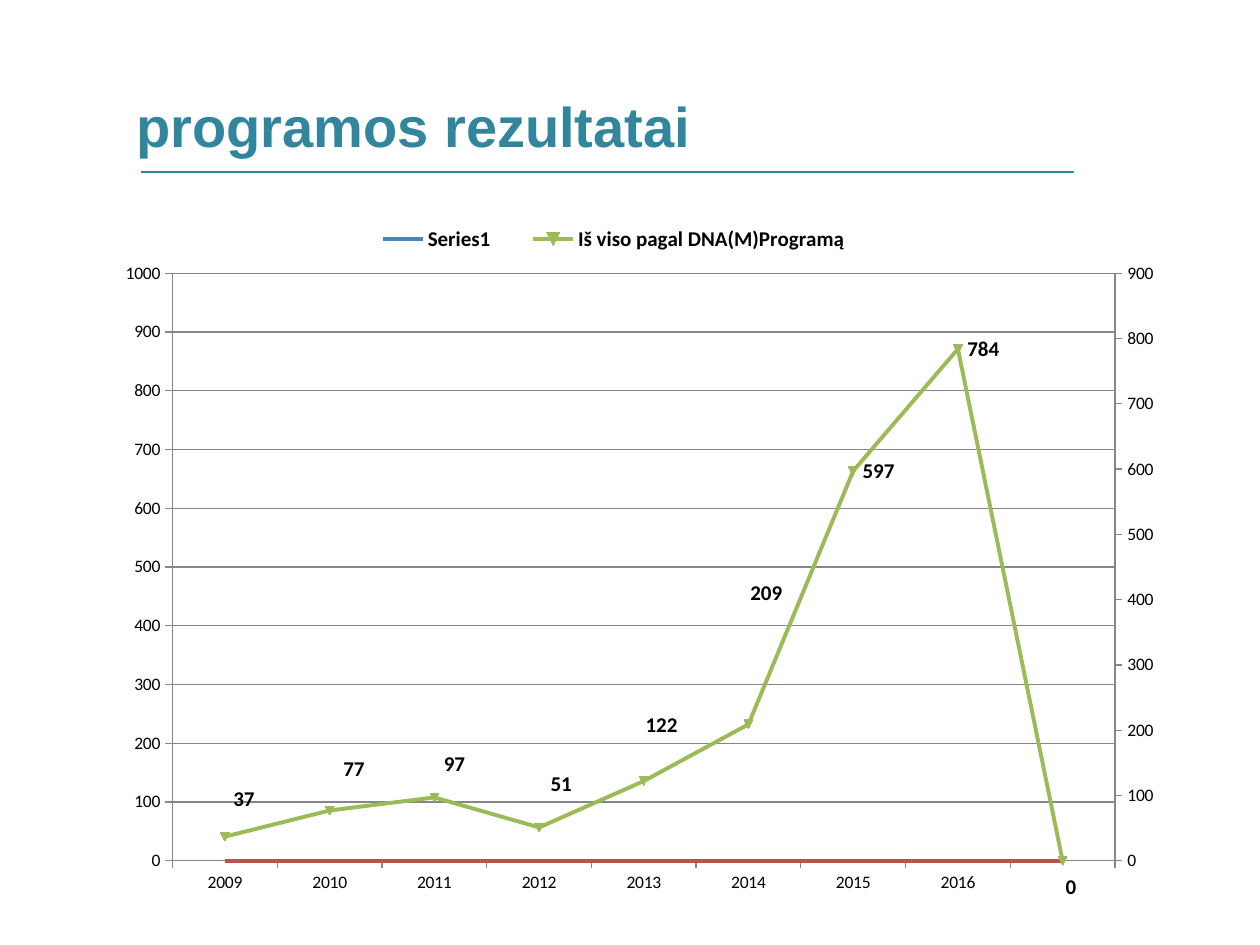
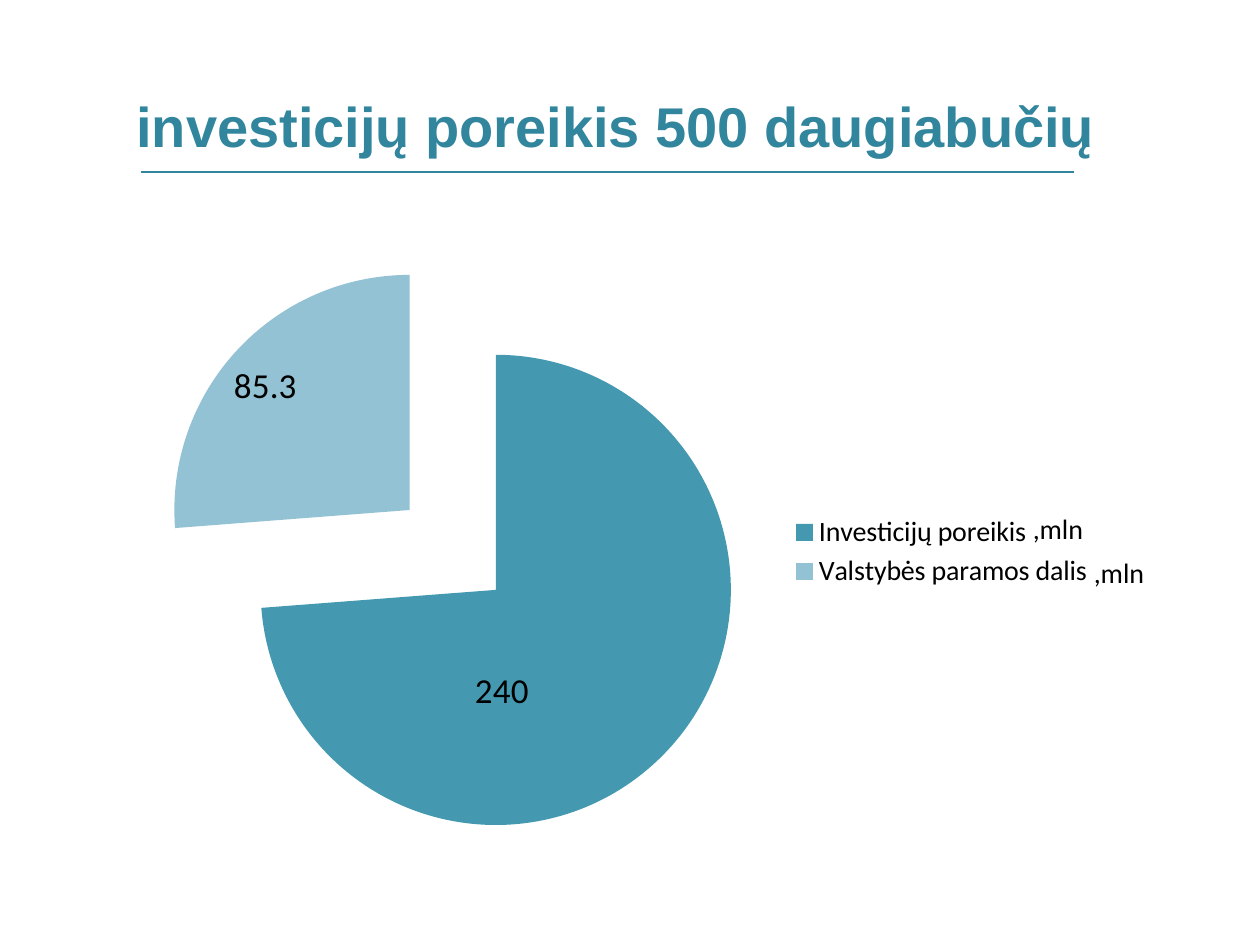
from copy import deepcopy

from lxml import etree
from pptx import Presentation
from pptx.chart.data import CategoryChartData
from pptx.dml.color import RGBColor
from pptx.enum.chart import (XL_CHART_TYPE, XL_LABEL_POSITION, XL_LEGEND_POSITION,
                             XL_MARKER_STYLE, XL_TICK_MARK)
from pptx.enum.shapes import MSO_CONNECTOR
from pptx.enum.text import MSO_AUTO_SIZE
from pptx.oxml.ns import qn
from pptx.util import Cm, Pt

LINE_STACKED, PIE = XL_CHART_TYPE.LINE_STACKED, XL_CHART_TYPE.PIE
LABEL_RIGHT, LABEL_CENTER = XL_LABEL_POSITION.RIGHT, XL_LABEL_POSITION.CENTER
LEGEND_TOP, LEGEND_RIGHT = XL_LEGEND_POSITION.TOP, XL_LEGEND_POSITION.RIGHT
AUTO_MARKER, NO_MARKER = XL_MARKER_STYLE.AUTOMATIC, XL_MARKER_STYLE.NONE
TICK_OUT = XL_TICK_MARK.OUTSIDE
STRAIGHT = MSO_CONNECTOR.STRAIGHT
GROW = MSO_AUTO_SIZE.SHAPE_TO_FIT_TEXT

color = RGBColor.from_string
TEAL, BLACK, GRID = "31859C", "000000", "868686"
BLUE, RED, GREEN = "4F81BD", "C0504D", "9BBB59"
NEED_COLOR, SUPPORT_COLOR = "4499B1", "92C2D4"


def add_text(slide, text, left, top, width, height, font, size, hex_color, bold=False):
    box = slide.shapes.add_textbox(Cm(left), Cm(top), Cm(width), Cm(height))
    box.text_frame.word_wrap = False
    box.text_frame.auto_size = GROW
    paragraph = box.text_frame.paragraphs[0]
    paragraph.text = text
    paragraph.font.name = font
    paragraph.font.size = Pt(size)
    paragraph.font.bold = bold
    paragraph.font.color.rgb = color(hex_color)


def set_layout(parent, **settings):
    """Place a chart part; numbers are percent of the chart's size."""
    for old in parent.xpath("c:layout"):
        parent.remove(old)
    layout = etree.SubElement(parent, qn("c:layout"))
    manual = etree.SubElement(layout, qn("c:manualLayout"))
    for tag, value in settings.items():
        text = value if isinstance(value, str) else f"{value / 100:.4f}"
        etree.SubElement(manual, qn(f"c:{tag}")).set("val", text)
    parent.insert(len(parent.xpath("c:idx | c:legendPos | c:legendEntry")), layout)


presentation = Presentation()
presentation.slide_width, presentation.slide_height = Cm(25.4), Cm(19.05)

# Title and rule on both slides
slides = []
for title, width in (("programos rezultatai", 15.39),
                     ("investicijų poreikis 500 daugiabučių", 20.4)):
    slide = presentation.slides.add_slide(presentation.slide_layouts[6])
    add_text(slide, title, 2.5, 1.73, width, 1.62, "Arial", 32, TEAL, True)
    rule = slide.shapes.add_connector(STRAIGHT, Cm(2.85), Cm(3.47), Cm(21.65), Cm(3.47))
    rule.line.color.rgb = color(TEAL)
    rule.line.width = Pt(0.75)
    etree.SubElement(rule.element.spPr, qn("a:effectLst"))
    slides.append(slide)
results_slide, investment_slide = slides

# Chart data
results_data = CategoryChartData()
results_data.categories = [str(year) for year in range(2009, 2017)] + [""]
results_data.add_series("", [None] * 9)
results_data.add_series("Series 2", [0] + [None] * 8)
results_data.add_series("Iš viso pagal DNA(M)Programą",
                        [37, 77, 97, 51, 122, 209, 597, 784, None])
investment_data = CategoryChartData()
investment_data.categories = ["Investicijų poreikis", "Valstybės paramos dalis"]
investment_data.add_series("Series 1", [240, 85.3])

# Both charts with their legends
charts = []
for slide, kind, data, place, legend_side, legend_size, legend_bold in (
    (results_slide, LINE_STACKED, results_data, (2.12, 4.12, 21.59, 14.17),
     LEGEND_TOP, 12, True),
    (investment_slide, PIE, investment_data, (2.85, 4.32, 19.46, 13.59),
     LEGEND_RIGHT, 16, False),
):
    chart = slide.shapes.add_chart(kind, *map(Cm, place), data).chart
    chart.has_title = False
    chart.font.name = "Calibri"
    chart.font.size = Pt(10)
    chart.font.color.rgb = color(BLACK)
    chart.has_legend = True
    chart.legend.position = legend_side
    chart.legend.include_in_layout = False
    chart.legend.font.size = Pt(legend_size)
    chart.legend.font.bold = legend_bold
    chart.plots[0].vary_by_categories = kind == PIE
    charts.append(chart)
results_chart, investment_chart = charts

# Results: lines and axes
for series, hex_color in zip(results_chart.plots[0].series, (BLUE, RED, GREEN)):
    series.smooth = False
    series.format.line.color.rgb = color(hex_color)
    series.format.line.width = Pt(2.25)
    series.marker.style = AUTO_MARKER if hex_color == GREEN else NO_MARKER
total = series
total.marker.format.fill.solid()
total.marker.format.fill.fore_color.rgb = color(GREEN)
total.marker.format.line.color.rgb = color(GREEN)

value_axis = results_chart.value_axis
value_axis.minimum_scale, value_axis.maximum_scale = 0, 1000
value_axis.major_unit = 100
value_axis.has_major_gridlines = True
value_axis.major_gridlines.format.line.color.rgb = color(GRID)
for axis in (value_axis, results_chart.category_axis):
    axis.major_tick_mark = TICK_OUT
    axis.format.line.color.rgb = color(GRID)

# Results: blanks count as zero, and the first series has an automatic name
results_chart.element.xpath(".//c:dispBlanksAs")[0].set("val", "zero")
unnamed_xml = results_chart.element.xpath(".//c:ser")[0]
unnamed_xml.remove(unnamed_xml.xpath("c:tx")[0])

# Investment: slice colours and explosion
shares = investment_chart.plots[0].series[0]
for index, hex_color in enumerate((NEED_COLOR, SUPPORT_COLOR)):
    fill = shares.points[index].format.fill
    fill.solid()
    fill.fore_color.rgb = color(hex_color)
share_xml = investment_chart.element.xpath(".//c:ser")[0]
explosion = etree.SubElement(share_xml, qn("c:explosion"))
explosion.set("val", "25")
share_xml.xpath("c:tx")[0].addnext(explosion)

# Value labels, some shifted from their usual place
total_shifts = {0: (-0.1, -5.3), 1: (0.4, -5.9), 2: (0, -4.7), 3: (0.2, -6.1),
                4: (-0.7, -7.9), 5: (-0.7, -18.6), 8: (-0.6, 3.8)}
share_shifts = {0: (-8.3, 3.2), 1: (-6, -6.5)}
for chart, series, shifts, side, size, bold in (
    (results_chart, total, total_shifts, LABEL_RIGHT, 12, True),
    (investment_chart, shares, share_shifts, LABEL_CENTER, 20, False),
):
    labels = series.data_labels
    labels.show_value = True
    labels.position = side
    labels.font.size = Pt(size)
    labels.font.bold = bold
    for leader_lines in chart.element.xpath(".//c:showLeaderLines"):
        leader_lines.set("val", "0")
    for index, (dx, dy) in shifts.items():
        label = series.points[index].data_label
        label.font.size = Pt(size)
        label.font.bold = bold
        label.position = side
        label_xml = chart.element.xpath(f'.//c:dLbl[c:idx/@val="{index}"]')[0]
        set_layout(label_xml, x=dx, y=dy)

# Results: the total moves to a second plot with its axis on the right
left_plot = results_chart.element.xpath(".//c:lineChart")[0]
right_plot = deepcopy(left_plot)
left_plot.addnext(right_plot)
left_plot.remove(left_plot.xpath("c:ser")[2])
for extra in right_plot.xpath("c:ser")[:2]:
    right_plot.remove(extra)
old_ids = [axis_id.get("val") for axis_id in left_plot.xpath("c:axId")]
new_ids = dict(zip(old_ids, ("50010", "50020")))
for axis_id in right_plot.xpath("c:axId"):
    axis_id.set("val", new_ids[axis_id.get("val")])
plot_area = left_plot.getparent()
last_axis = plot_area.xpath("c:valAx")[0]
for axis_xml, changes in (
    (plot_area.xpath("c:catAx")[0], {"c:delete": "1"}),
    (last_axis, {"c:axPos": "r", "c:crosses": "max", "c:scaling/c:max": "900"}),
):
    right_axis = deepcopy(axis_xml)
    for reference in right_axis.xpath("c:axId | c:crossAx"):
        reference.set("val", new_ids[reference.get("val")])
    for gridlines in right_axis.xpath("c:majorGridlines"):
        right_axis.remove(gridlines)
    for query, value in changes.items():
        for setting in right_axis.xpath(query):
            setting.set("val", value)
    last_axis.addnext(right_axis)
    last_axis = right_axis

# Results: the second series stays out of the legend
legend_xml = results_chart.element.xpath(".//c:legend")[0]
hidden_entry = etree.SubElement(legend_xml, qn("c:legendEntry"))
etree.SubElement(hidden_entry, qn("c:idx")).set("val", "1")
etree.SubElement(hidden_entry, qn("c:delete")).set("val", "1")
legend_xml.xpath("c:legendPos")[0].addnext(hidden_entry)

# Places of plots and legends
for chart, plot_place, legend_place in (
    (results_chart, (6.3, 9.8, 88, 83.6), (22.6, 2.2, 49.8, 5.5)),
    (investment_chart, (1.8, 6.2, 60.9, 87.2), (66.9, 43.9, 32, 12.4)),
):
    plot_xml = chart.element.xpath(".//c:plotArea")[0]
    set_layout(plot_xml, layoutTarget="inner", xMode="edge", yMode="edge",
               **dict(zip("xywh", plot_place)))
    set_layout(chart.element.xpath(".//c:legend")[0], xMode="edge", yMode="edge",
               **dict(zip("xywh", legend_place)))

# Units beside the investment legend
for left, top in ((20.57, 10.18), (21.8, 11.07)):
    add_text(investment_slide, ",mln", left, top, 2.46, 0.94, "Calibri", 16, BLACK)

presentation.save("out.pptx")
